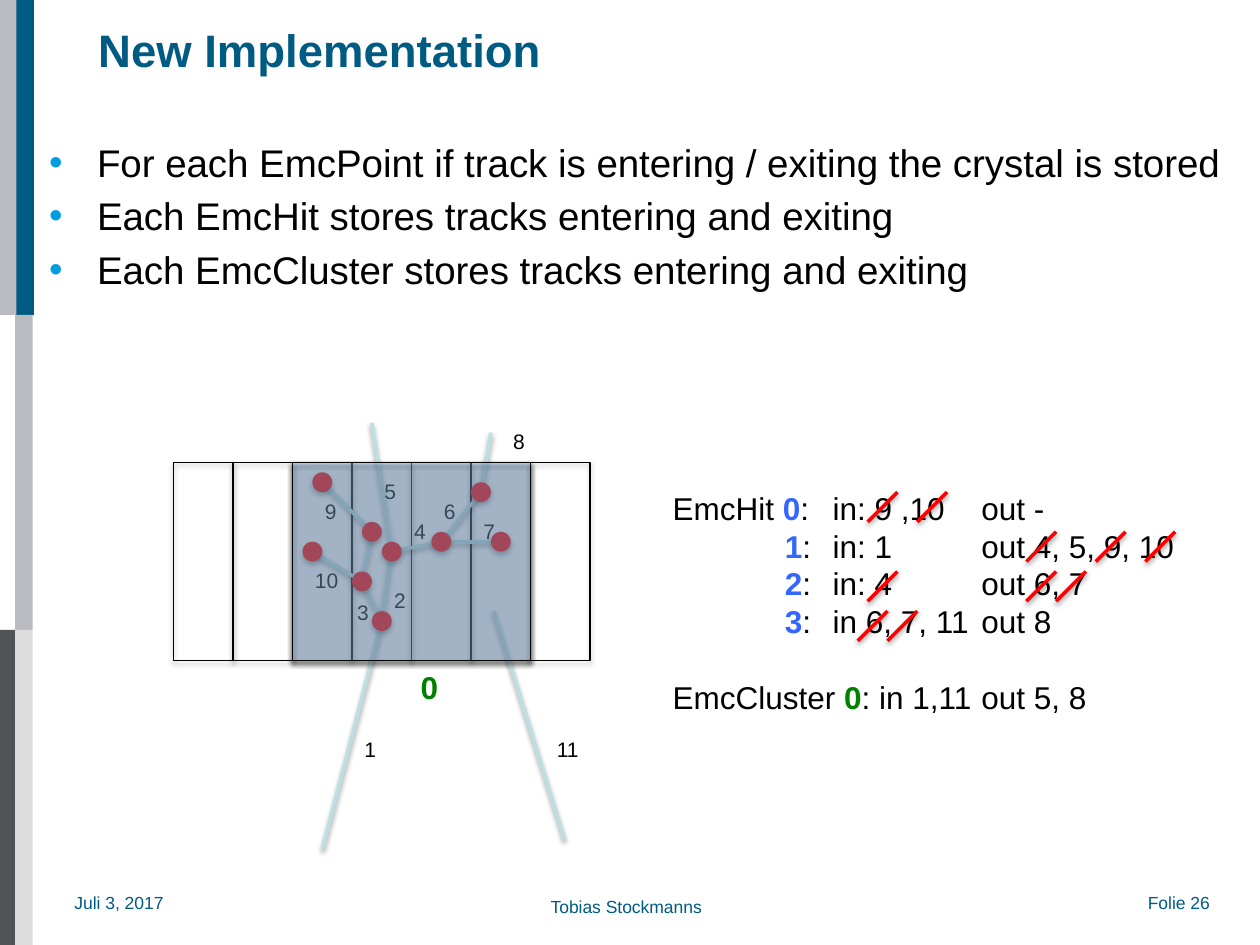
"""Build the slide on storing entering and exiting tracks per crystal."""
import pptx
import pptx.dml.color
import pptx.enum.shapes
import pptx.enum.text
import pptx.oxml
import pptx.oxml.ns
import pptx.util
from lxml import etree

RGB = pptx.dml.color.RGBColor
SHAPE = pptx.enum.shapes.MSO_SHAPE
STRAIGHT = pptx.enum.shapes.MSO_CONNECTOR.STRAIGHT
ANCHOR = pptx.enum.text.MSO_ANCHOR
FIT = pptx.enum.text.MSO_AUTO_SIZE.SHAPE_TO_FIT_TEXT
Inches, Pt = pptx.util.Inches, pptx.util.Pt
NS = pptx.oxml.ns.nsdecls("a")
qn = pptx.oxml.ns.qn

BLACK = RGB(0, 0, 0)
RED = RGB(0xFF, 0, 0)
NAVY = RGB(0x00, 0x5B, 0x82)
SILVER = RGB(0xB9, 0xBB, 0xC0)
DARK = RGB(0x51, 0x53, 0x55)
PALE = RGB(0xDC, 0xDC, 0xDC)
TRACK = RGB(0xBB, 0xE0, 0xE3)
CLUSTER = RGB(0x99, 0xCC, 0xFF)
BLUE = RGB(0x33, 0x66, 0xFF)
GREEN = RGB(0x00, 0x80, 0x00)

TITLE = "New Implementation"
BULLETS = ["For each EmcPoint if track is entering / exiting the crystal is stored",
           "Each EmcHit stores tracks entering and exiting",
           "Each EmcCluster stores tracks entering and exiting"]
FOOTER = [("Juli 3, 2017", 0.59, 7.08, 0.85), ("Folie 26", 9.11, 7.08, 0.62),
          ("Tobias Stockmanns", 4.37, 7.11, 1.26)]
BANDS = [(0, 0, SILVER), (0, 2, DARK), (0.13, 0, NAVY), (0.12, 1, SILVER), (0.12, 2, PALE)]
HITS = [("EmcHit ", "0", BLUE, ":\tin: 9 ,10\tout -"),
        ("\t", "1", BLUE, ":\tin: 1\tout 4, 5, 9, 10"),
        ("\t", "2", BLUE, ":\tin: 4\tout 6, 7"),
        ("\t", "3", BLUE, ":\tin 6, 7, 11\tout 8"),
        ("EmcCluster ", "0", GREEN, ": in 1,11\tout 5, 8")]
TABS = [0.89, 1.27, 2.45]

UNIT, LEFT, TOP = 0.0787, 0.04, 0.05
CELL_COL, CELL_ROW, CELL_W, CELL_H, CELLS = 17, 46, 6, 20, 7
NODES = {"start1": (32, 85), "a": (38, 62), "b": (36, 58), "c": (39, 55), "d": (44, 54),
         "end5": (37, 42), "e": (50, 54), "f": (48, 49), "end8": (49, 43), "g": (31, 55),
         "h": (37, 53), "i": (32, 48), "start11": (56.4, 84), "end11": (49.3, 61)}
TRACKS = [("start1", "a"), ("a", "b"), ("a", "c"), ("c", "d"), ("c", "end5"), ("d", "e"),
          ("d", "f"), ("f", "end8"), ("b", "g"), ("b", "h"), ("h", "i"), ("start11", "end11")]
DOTS = "abhcdfgie"
LABELS = [("1", 35, 73), ("2", 38, 58), ("3", 34.25, 59.25), ("4", 40, 51), ("5", 37, 47),
          ("6", 43, 49), ("7", 47, 51), ("8", 50, 42), ("9", 31, 49), ("10", 30, 56),
          ("11", 54.4, 73)]
STRIKES = [(87, 52), (92, 52), (110, 56), (115, 56), (103, 56), (87, 60), (103, 60),
           (106, 60), (86, 64), (89, 64)]
STRIKE = 3


def grid_x(col):
    return Inches(LEFT + col * UNIT)


def grid_y(row):
    return Inches(TOP + row * UNIT)


def add_shadow(sp, alpha, dist):
    sppr = sp._element.spPr
    for old in sppr.findall(qn("a:effectLst")):
        sppr.remove(old)
    sppr.append(pptx.oxml.parse_xml(
        f'<a:effectLst {NS}><a:outerShdw blurRad="{Pt(3.1)}" dist="{Pt(dist)}" dir="5400000" '
        f'rotWithShape="0"><a:srgbClr val="000000"><a:alpha val="{alpha * 1000}"/>'
        '</a:srgbClr></a:outerShdw></a:effectLst>'))


def add_filled(s, kind, box, fill=None, outlined=False):
    sp = s.shapes.add_shape(kind, *box)
    sp.shadow.inherit = False
    if fill is None:
        sp.fill.background()
    else:
        sp.fill.solid()
        sp.fill.fore_color.rgb = fill
    if outlined:
        sp.line.color.rgb = BLACK
        sp.line.width = Pt(0.75)
    else:
        sp.line.fill.background()
    return sp


def add_line(s, start, end, color):
    c = s.shapes.add_connector(STRAIGHT, grid_x(start[0]), grid_y(start[1]),
                               grid_x(end[0]), grid_y(end[1]))
    c.line.color.rgb = color
    c.line.width = Pt(2)
    add_shadow(c, 38, 1.6)


def add_box(s, box, wrap=False, inset=True):
    tf = s.shapes.add_textbox(*box).text_frame
    tf.word_wrap = wrap
    if not wrap:
        tf.auto_size = FIT
    if not inset:
        tf.margin_left = tf.margin_top = tf.margin_right = tf.margin_bottom = 0
    return tf


def add_run(p, text, size, color=BLACK, bold=False):
    r = p.add_run()
    r.text = text
    r.font.name = "Arial"
    r.font.size = Pt(size)
    r.font.color.rgb = color
    r.font.bold = bold


def next_paragraph(tf, i):
    return tf.add_paragraph() if i else tf.paragraphs[0]


def add_frame(s):
    for left, third, color in BANDS:
        add_filled(s, SHAPE.RECTANGLE,
                   (Inches(left), Inches(2.5 * third), Inches(0.14), Inches(2.5)), color)
    for text, left, top, width in FOOTER:
        tf = add_box(s, (Inches(left), Inches(top), Inches(width), Inches(0.17)), inset=False)
        add_run(tf.paragraphs[0], text, 10, NAVY)
    tf = add_box(s, (Inches(0.78), Inches(0.08), Inches(7.27), Inches(0.62)), True, False)
    tf.vertical_anchor = ANCHOR.MIDDLE
    add_run(tf.paragraphs[0], TITLE, 26, NAVY, True)


def add_bullets(s):
    tf = add_box(s, (Inches(0.39), Inches(1.1), Inches(9.49), Inches(5.48)), True, False)
    for i, text in enumerate(BULLETS):
        p = next_paragraph(tf, i)
        ppr = p._p.get_or_add_pPr()
        ppr.set("marL", str(Inches(0.38)))
        ppr.set("indent", str(-Inches(0.38)))
        color = etree.SubElement(ppr, qn("a:buClr"))
        etree.SubElement(color, qn("a:srgbClr"), val="009EE0")
        etree.SubElement(ppr, qn("a:buFont"), typeface="Arial")
        etree.SubElement(ppr, qn("a:buChar"), char="•")
        if i:
            p.space_before = Pt(4.2)
        add_run(p, text, 22)


def add_crystals(s):
    for i in range(CELLS):
        box = (grid_x(CELL_COL + i * CELL_W), grid_y(CELL_ROW),
               Inches(CELL_W * UNIT), Inches(CELL_H * UNIT))
        add_shadow(add_filled(s, SHAPE.RECTANGLE, box, outlined=True), 35, 1.8)
    for start, end in TRACKS:
        add_line(s, NODES[start], NODES[end], TRACK)
    for text, col, row in LABELS:
        width = 0.3 if len(text) == 1 else 0.4
        tf = add_box(s, (grid_x(col), grid_y(row), Inches(width), Inches(0.3)))
        add_run(tf.paragraphs[0], text, 12)
    for name in DOTS:
        col, row = NODES[name]
        box = (grid_x(col - 1), grid_y(row - 1), Inches(2 * UNIT), Inches(2 * UNIT))
        add_shadow(add_filled(s, SHAPE.OVAL, box, RED), 35, 1.8)
    box = (grid_x(CELL_COL + 2 * CELL_W), grid_y(CELL_ROW),
           Inches(4 * CELL_W * UNIT), Inches(CELL_H * UNIT))
    cluster = add_filled(s, SHAPE.RECTANGLE, box, CLUSTER, True)
    etree.SubElement(cluster._element.spPr.find(".//" + qn("a:srgbClr")),
                     qn("a:alpha"), val="35000")
    add_shadow(cluster, 35, 1.8)
    tf = add_box(s, (Inches(3.24), Inches(5.25), Inches(0.34), Inches(0.4)))
    add_run(tf.paragraphs[0], "0", 18, GREEN, True)


def add_hits(s):
    tf = add_box(s, (Inches(5.24), Inches(3.83), Inches(4.22), Inches(1.92)))
    for i, (lead, number, color, rest) in enumerate(HITS):
        p = next_paragraph(tf, i)
        tabs = etree.SubElement(p._p.get_or_add_pPr(), qn("a:tabLst"))
        for pos in TABS:
            etree.SubElement(tabs, qn("a:tab"), pos=str(Inches(pos)), algn="l")
        if lead.startswith("EmcCluster"):
            p.space_before = Pt(21.6)
        add_run(p, lead, 18)
        add_run(p, number, 18, color, True)
        add_run(p, rest, 18)
    for col, row in STRIKES:
        add_line(s, (col, row), (col + STRIKE, row - STRIKE), RED)


def main():
    prs = pptx.Presentation()
    prs.slide_width, prs.slide_height = Inches(10), Inches(7.5)
    s = prs.slides.add_slide(prs.slide_layouts[6])
    add_frame(s)
    add_bullets(s)
    add_crystals(s)
    add_hits(s)
    prs.save("out.pptx")


if __name__ == "__main__":
    main()
